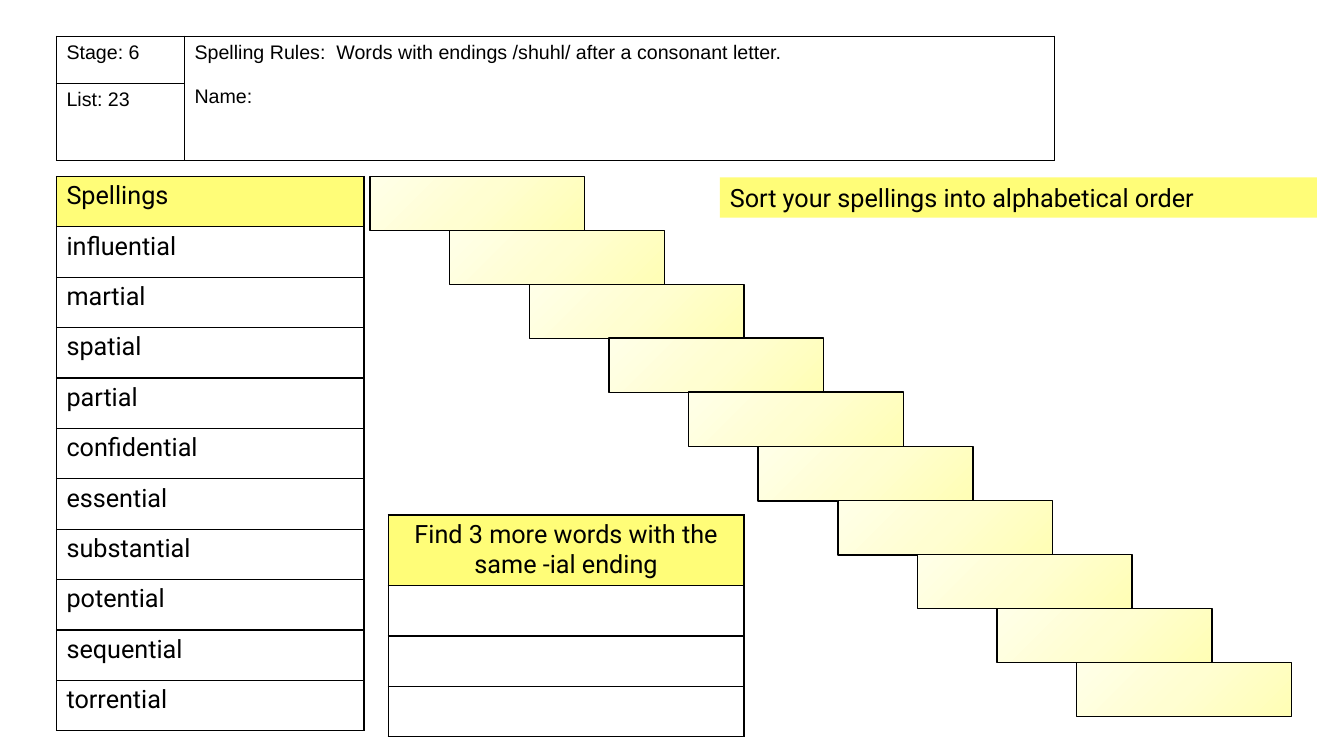
from copy import deepcopy

from lxml import etree
from pptx import Presentation
from pptx import util as u
from pptx.dml.color import RGBColor
from pptx.enum import shapes, text
from pptx.oxml import ns

BLACK = RGBColor(0x00, 0x00, 0x00)
YELLOW = RGBColor(0xFF, 0xFD, 0x78)
STEP_STOPS = {
    0: RGBColor(0xFF, 0xFE, 0xB5),
    0.5: RGBColor(0xFF, 0xFE, 0xD1),
    1: RGBColor(0xFF, 0xFF, 0xE8),
}
HEADER_FONT = {"name": "Arial", "size": u.Pt(14)}
WORD_FONT = {"name": "Roboto", "size": u.Pt(18)}
SPELLINGS = [
    "influential", "martial", "spatial", "partial", "confidential",
    "essential", "substantial", "potential", "sequential", "torrential",
]


def write(frame, lines, font, **paragraph_format):
    for index, line in enumerate(lines):
        paragraph = frame.paragraphs[0] if index == 0 else frame.add_paragraph()
        paragraph.text = line
        for name, value in paragraph_format.items():
            setattr(paragraph, name, value)
        for name, value in font.items():
            setattr(paragraph.font, name, value)
        paragraph.font.color.rgb = BLACK


def add_border(cell):
    properties = cell._tc.get_or_add_tcPr()
    for side in ("lnL", "lnR", "lnT", "lnB"):
        line = etree.SubElement(properties, ns.qn(f"a:{side}"), w=str(u.Pt(1)))
        fill = etree.SubElement(line, ns.qn("a:solidFill"))
        etree.SubElement(fill, ns.qn("a:srgbClr"), val=str(BLACK))


def add_grid(slide, left, top, widths, heights):
    frame = slide.shapes.add_table(
        len(heights), len(widths), u.Inches(left), u.Inches(top),
        u.Inches(sum(widths)), u.Inches(sum(heights)))
    grid = frame.table
    grid.first_row = grid.horz_banding = False
    for column, width in zip(grid.columns, widths):
        column.width = u.Inches(width)
    for row, height in zip(grid.rows, heights):
        row.height = u.Inches(height)
    for cell in grid.iter_cells():
        add_border(cell)
        cell.fill.background()
    return grid


def fill_yellow(part):
    part.fill.solid()
    part.fill.fore_color.rgb = YELLOW


def add_header(slide, left, top):
    header = add_grid(slide, left, top, [1.27, 8.63], [0.47, 0.76])
    header.cell(0, 1).merge(header.cell(1, 1))
    write(header.cell(0, 0).text_frame, ["Stage: 6"], HEADER_FONT)
    write(header.cell(1, 0).text_frame, ["List: 23"], HEADER_FONT)
    rules = header.cell(0, 1).text_frame
    write(rules, [
        "Spelling Rules:  Words with endings /shuhl/ after a consonant letter.",
        "Name:",
    ], HEADER_FONT)
    rules.paragraphs[1].space_before = u.Pt(16)


def add_word_list(slide, left, top, width, row_height):
    words = ["Spellings"] + SPELLINGS
    word_list = add_grid(slide, left, top, [width], [row_height] * len(words))
    for row, word in enumerate(words):
        write(word_list.cell(row, 0).text_frame, [word], WORD_FONT)
    fill_yellow(word_list.cell(0, 0))


def fill_step(step):
    step.fill.gradient()
    step.fill.gradient_angle = 135
    stop_list = step.element.spPr.find(".//" + ns.qn("a:gsLst"))
    stop_list.append(deepcopy(stop_list[-1]))
    for stop, (position, color) in zip(step.fill.gradient_stops, STEP_STOPS.items()):
        stop.position = position
        stop.color.rgb = color


def add_staircase(slide, left, top, count=5):
    staircase = slide.shapes.add_group_shape()
    for index in range(count):
        step = staircase.shapes.add_shape(
            shapes.MSO_SHAPE.RECTANGLE,
            u.Inches(left + 0.79 * index), u.Inches(top + 0.535 * index),
            u.Inches(2.13), u.Inches(0.54))
        step.shadow.inherit = False
        fill_step(step)
        step.line.color.rgb = BLACK
        step.line.width = u.Pt(1)


def add_instruction(slide, left, top, width, height):
    instruction = slide.shapes.add_textbox(
        u.Inches(left), u.Inches(top), u.Inches(width), u.Inches(height))
    fill_yellow(instruction)
    instruction.text_frame.word_wrap = True
    write(instruction.text_frame,
          ["Sort your spellings into alphabetical order"], WORD_FONT)


def add_extra_words(slide, left, top, width):
    extra_words = add_grid(slide, left, top, [width], [0.7, 0.5, 0.5, 0.5])
    prompt = extra_words.cell(0, 0)
    fill_yellow(prompt)
    write(prompt.text_frame, ["Find 3 more words with the same -ial ending"],
          WORD_FONT, alignment=text.PP_ALIGN.CENTER)


def main():
    worksheet = Presentation()
    worksheet.slide_width = u.Inches(13.33)
    worksheet.slide_height = u.Inches(7.5)
    slide = worksheet.slides.add_slide(worksheet.slide_layouts[6])
    add_word_list(slide, 0.56, 1.75, 3.05, 0.5)
    add_header(slide, 0.56, 0.36)
    add_staircase(slide, 7.52, 4.43)
    add_staircase(slide, 3.67, 1.75)
    add_instruction(slide, 7.14, 1.76, 5.92, 0.4)
    add_extra_words(slide, 3.85, 5.11, 3.53)
    worksheet.save("out.pptx")


if __name__ == "__main__":
    main()
